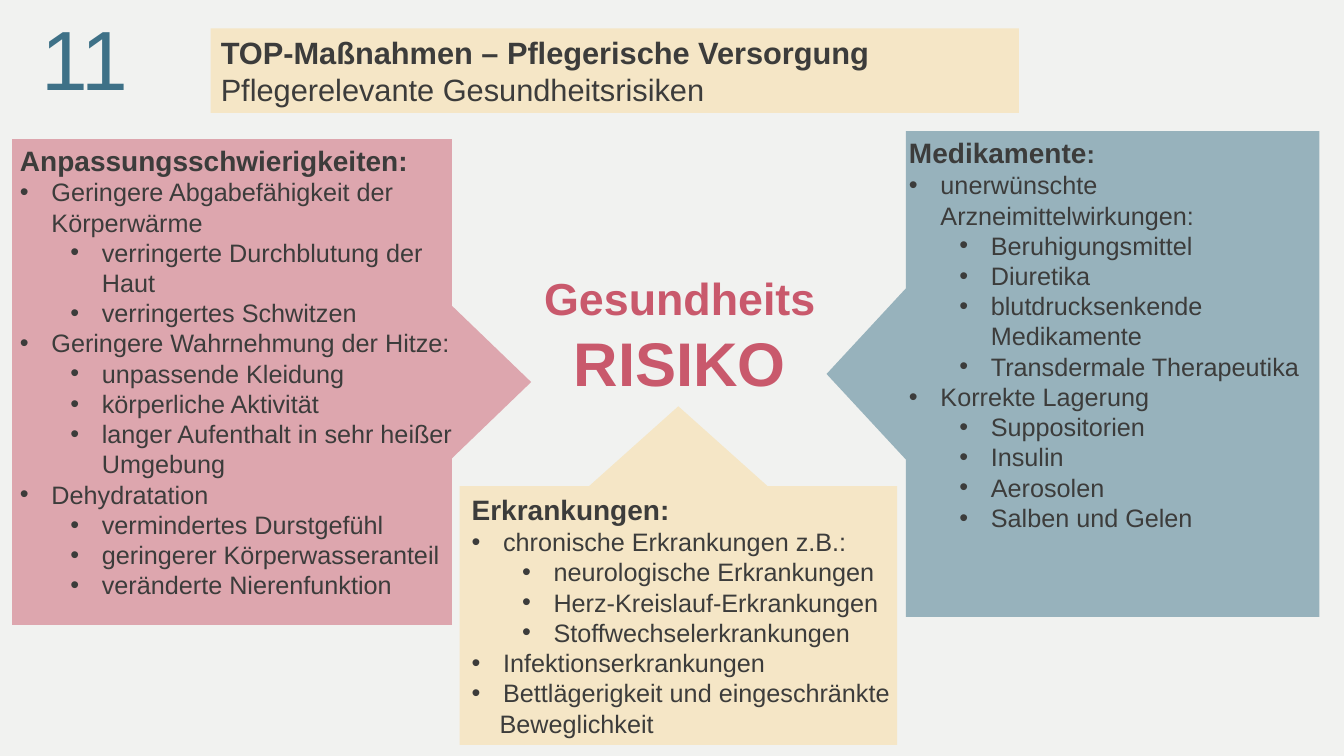
import dataclasses

import lxml.etree
import pptx
import pptx.dml.color
import pptx.enum.shapes
import pptx.enum.text
import pptx.oxml.ns
import pptx.util

Pt = pptx.util.Pt
Align = pptx.enum.text.PP_ALIGN


@dataclasses.dataclass(frozen=True)
class Theme:
    font: str = "Arial"
    back: str = "F1F2F0"
    ink: str = "3C3C3B"
    teal: str = "3E7187"
    red: str = "C9596C"
    pink: str = "DDA6AE"
    cream: str = "F5E6C6"
    blue: str = "97B2BC"
    body: int = 18
    head: int = 20
    title: int = 22
    risk: int = 32
    large: int = 44
    number: int = 60


THEME = Theme()

ADAPT = [
    (0, "Geringere Abgabefähigkeit der Körperwärme"),
    (1, "verringerte Durchblutung der Haut"),
    (1, "verringertes Schwitzen"),
    (0, "Geringere Wahrnehmung der Hitze:"),
    (1, "unpassende Kleidung"),
    (1, "körperliche Aktivität"),
    (1, "langer Aufenthalt in sehr heißer Umgebung"),
    (0, "Dehydratation"),
    (1, "vermindertes Durstgefühl"),
    (1, "geringerer Körperwasseranteil"),
    (1, "veränderte Nierenfunktion"),
]
ILLS = [
    (0, "chronische Erkrankungen z.B.:"),
    (1, "neurologische Erkrankungen"),
    (1, "Herz-Kreislauf-Erkrankungen"),
    (1, "Stoffwechselerkrankungen"),
    (0, "Infektionserkrankungen"),
    (0, "Bettlägerigkeit und eingeschränkte"),
]
DRUGS = [
    (0, "unerwünschte Arzneimittelwirkungen:"),
    (1, "Beruhigungsmittel"),
    (1, "Diuretika"),
    (1, "blutdrucksenkende Medikamente"),
    (1, "Transdermale Therapeutika"),
    (0, "Korrekte Lagerung"),
    (1, "Suppositorien"),
    (1, "Insulin"),
    (1, "Aerosolen"),
    (1, "Salben und Gelen"),
]


def tint(fill, color):
    fill.solid()
    fill.fore_color.rgb = pptx.dml.color.RGBColor.from_string(color)


def style(para, size, color=THEME.ink, bold=False):
    for run in para.runs:
        run.font.name = THEME.font
        run.font.size = Pt(size)
        run.font.bold = bold
        run.font.color.rgb = pptx.dml.color.RGBColor.from_string(color)


def add_box(slide, area, text, wrap=True):
    box = slide.shapes.add_textbox(*map(Pt, area))
    frame = box.text_frame
    frame.word_wrap = wrap
    frame.text = text
    return frame


def add_arrow(slide, area, color, ratios, turn=0):
    kind = pptx.enum.shapes.MSO_SHAPE.RIGHT_ARROW_CALLOUT
    arrow = slide.shapes.add_shape(kind, *map(Pt, area))
    arrow.shadow.inherit = False
    arrow.rotation = turn
    for index, ratio in enumerate(ratios):
        arrow.adjustments[index] = ratio
    tint(arrow.fill, color)
    arrow.line.fill.background()


def indent(para, left, hang=0):
    props = para._p.get_or_add_pPr()
    props.set("marL", str(Pt(left)))
    props.set("indent", str(Pt(-hang)))
    return props


def add_bullet(frame, level, text):
    para = frame.add_paragraph()
    para.text = text
    para.level = level
    props = indent(para, 22.5 + 36 * level, 22.5)
    qn = pptx.oxml.ns.qn
    lxml.etree.SubElement(props, qn("a:buFont")).set("typeface", THEME.font)
    lxml.etree.SubElement(props, qn("a:buChar")).set("char", "•")
    style(para, THEME.body)


def add_list(slide, area, head, items):
    frame = add_box(slide, area, head)
    style(frame.paragraphs[0], THEME.head, bold=True)
    for level, text in items:
        add_bullet(frame, level, text)
    return frame


def set_title(slide):
    title = slide.shapes.title
    title.left, title.top, title.width, title.height = map(
        Pt, (150.5, 20.2, 577.4, 60.5))
    tint(title.fill, THEME.cream)
    frame = title.text_frame
    frame.word_wrap = True
    frame.auto_size = pptx.enum.text.MSO_AUTO_SIZE.NONE
    frame.vertical_anchor = pptx.enum.text.MSO_ANCHOR.MIDDLE
    frame.text = ("TOP-Maßnahmen – Pflegerische Versorgung\n"
                  "Pflegerelevante Gesundheitsrisiken")
    for para, bold in zip(frame.paragraphs, (True, False)):
        para.alignment = Align.LEFT
        style(para, THEME.title, bold=bold)


def add_risk(slide):
    frame = add_box(slide, (380.9, 190.1, 209.5, 99.4),
                    "Gesundheits\nRISIKO", wrap=False)
    for para, size in zip(frame.paragraphs, (THEME.risk, THEME.large)):
        para.alignment = Align.CENTER
        style(para, size, THEME.red, True)


def main():
    deck = pptx.Presentation()
    deck.slide_width, deck.slide_height = Pt(960), Pt(540)
    slide = deck.slides.add_slide(deck.slide_layouts.get_by_name("Title Only"))
    tint(slide.background.fill, THEME.back)

    set_title(slide)
    number = add_box(slide, (22.3, 1.4, 89.3, 80), "11")
    style(number.paragraphs[0], THEME.number, THEME.teal)

    add_arrow(slide, (8.6, 99.4, 370.8, 347), THEME.pink,
              (0.352, 0.157, 0.163, 0.915))
    add_arrow(slide, (363.6, 254.9, 241.9, 312.5), THEME.cream,
              (0.529, 0.264, 0.236, 0.765), 270)
    add_arrow(slide, (590.4, 93.6, 352, 347), THEME.blue,
              (0.352, 0.176, 0.163, 0.915), 180)

    add_list(slide, (7.2, 98.6, 333.4, 359.3),
             "Anpassungsschwierigkeiten:", ADAPT)
    ills = add_list(slide, (329.8, 348.5, 442, 184.3), "Erkrankungen:", ILLS)
    rest = ills.add_paragraph()
    rest.text = "Beweglichkeit"
    indent(rest, 20)
    style(rest, THEME.body)
    drugs = add_list(slide, (642.2, 93.6, 315.4, 307.4), "Medikamente", DRUGS)
    colon = drugs.paragraphs[0].add_run()
    colon.text = ":"
    style(drugs.paragraphs[0], THEME.head, bold=True)
    colon.font.size = Pt(THEME.body)

    add_risk(slide)
    deck.save("out.pptx")


if __name__ == "__main__":
    main()
